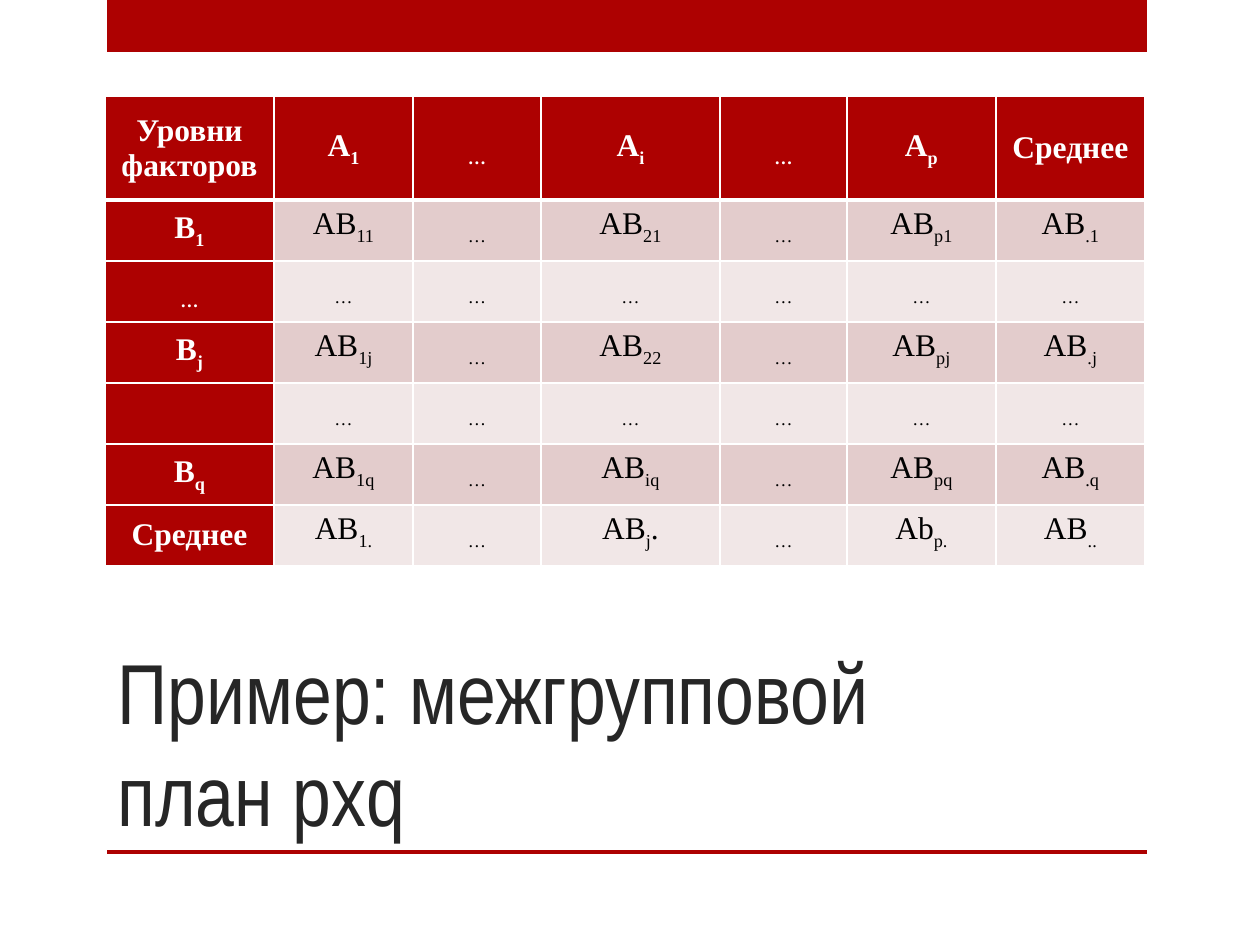
from dataclasses import dataclass
from lxml import etree
from pptx import Presentation
from pptx.dml.color import RGBColor
from pptx.enum.shapes import MSO_SHAPE
from pptx.enum.text import MSO_ANCHOR, PP_ALIGN
from pptx.oxml.ns import qn
from pptx.util import Pt

RECTANGLE = MSO_SHAPE.RECTANGLE
TOP, MIDDLE, BOTTOM = MSO_ANCHOR.TOP, MSO_ANCHOR.MIDDLE, MSO_ANCHOR.BOTTOM
CENTER = PP_ALIGN.CENTER
EMU_PER_PX = 914400 / 126
BLANK_LAYOUT = 6


@dataclass(frozen=True)
class Theme:
    accent: str = "AD0101"
    odd_band: str = "E3CCCC"
    even_band: str = "F1E7E7"
    white: str = "FFFFFF"
    black: str = "000000"
    title_color: str = "262626"
    title_font: str = "Arial Narrow"
    table_font: str = "Times New Roman"
    title_size: float = 48.6
    table_size: float = 18
    thin_border: float = 1
    thick_border: float = 3


THEME = Theme()

COLUMN_WIDTHS = [169, 139, 128, 179, 127, 149, 149]
ROW_HEIGHTS = [104] + [61] * 6
GAP_ROW = ["_…"] * 6
TABLE_TEXT = [
    ["Уровни факторов", "А_1", "_…", "А_i", "_…", "А_p", "Среднее"],
    ["B_1", "AB_11", "_…", "AB_21", "_…", "AB_p1", "AB_.1"],
    ["_…"] + GAP_ROW,
    ["B_j", "AB_1j", "_…", "AB_22", "_…", "AB_pj", "AB_.j"],
    [""] + GAP_ROW,
    ["B_q", "AB_1q", "_…", "AB_iq", "_…", "AB_pq", "AB_.q"],
    ["Среднее", "AB_1.", "_…", "AB_j_.", "_…", "Ab_p.", "AB_.."],
]


def px(length):
    return round(length * EMU_PER_PX)


def scaled(box):
    return [px(length) for length in box]


def add_span(para, text, font, size, color, bold=False):
    span = para.add_run()
    span.text = text
    span.font.name = font
    span.font.size = Pt(size)
    span.font.bold = bold
    span.font.color.rgb = RGBColor.from_string(color)
    return span


def add_bar(page, box):
    bar = page.shapes.add_shape(RECTANGLE, *scaled(box))
    bar.shadow.inherit = False
    bar.fill.solid()
    bar.fill.fore_color.rgb = RGBColor.from_string(THEME.accent)
    bar.line.fill.background()


def add_title(page, box, text):
    frame = page.shapes.add_textbox(*scaled(box)).text_frame
    frame.word_wrap = True
    frame.vertical_anchor = BOTTOM
    add_span(frame.paragraphs[0], text, THEME.title_font, THEME.title_size, THEME.title_color)


def set_borders(cell, top, bottom):
    properties = cell._tc.get_or_add_tcPr()
    widths = {"a:lnL": THEME.thin_border, "a:lnR": THEME.thin_border, "a:lnT": top, "a:lnB": bottom}
    for index, (side, width) in enumerate(widths.items()):
        line = etree.Element(qn(side), w=str(Pt(width)))
        fill = etree.SubElement(line, qn("a:solidFill"))
        etree.SubElement(fill, qn("a:srgbClr"), val=THEME.white)
        properties.insert(index, line)


def fill_cell(cell, markup, row, column):
    heading = row == 0 or column == 0
    band = THEME.odd_band if row % 2 else THEME.even_band
    cell.fill.solid()
    cell.fill.fore_color.rgb = RGBColor.from_string(THEME.accent if heading else band)
    cell.vertical_anchor = MIDDLE if heading else TOP
    set_borders(
        cell,
        top=THEME.thick_border if row == 1 else THEME.thin_border,
        bottom=THEME.thick_border if row == 0 else THEME.thin_border,
    )
    para = cell.text_frame.paragraphs[0]
    para.alignment = CENTER
    color = THEME.white if heading else THEME.black
    for index, text in enumerate(markup.split("_")):
        if text:
            span = add_span(para, text, THEME.table_font, THEME.table_size, color, heading)
            if index % 2:
                span.font._element.set("baseline", "-25000")


def add_plan_table(page, box):
    table = page.shapes.add_table(len(ROW_HEIGHTS), len(COLUMN_WIDTHS), *scaled(box)).table
    for column, width in zip(table.columns, COLUMN_WIDTHS):
        column.width = px(width)
    for row, height in zip(table.rows, ROW_HEIGHTS):
        row.height = px(height)
    for row, texts in enumerate(TABLE_TEXT):
        for column, markup in enumerate(texts):
            fill_cell(table.cell(row, column), markup, row, column)


def main():
    deck = Presentation()
    deck.slide_width, deck.slide_height = px(1260), px(945)
    page = deck.slides.add_slide(deck.slide_layouts[BLANK_LAYOUT])
    add_bar(page, (107, 0, 1040, 52))
    add_bar(page, (107, 850, 1040, 4))
    add_title(page, (105, 630, 935, 220), "Пример: межгрупповой план pхq")
    add_plan_table(page, (105, 96, sum(COLUMN_WIDTHS), sum(ROW_HEIGHTS)))
    deck.save("out.pptx")


if __name__ == "__main__":
    main()
